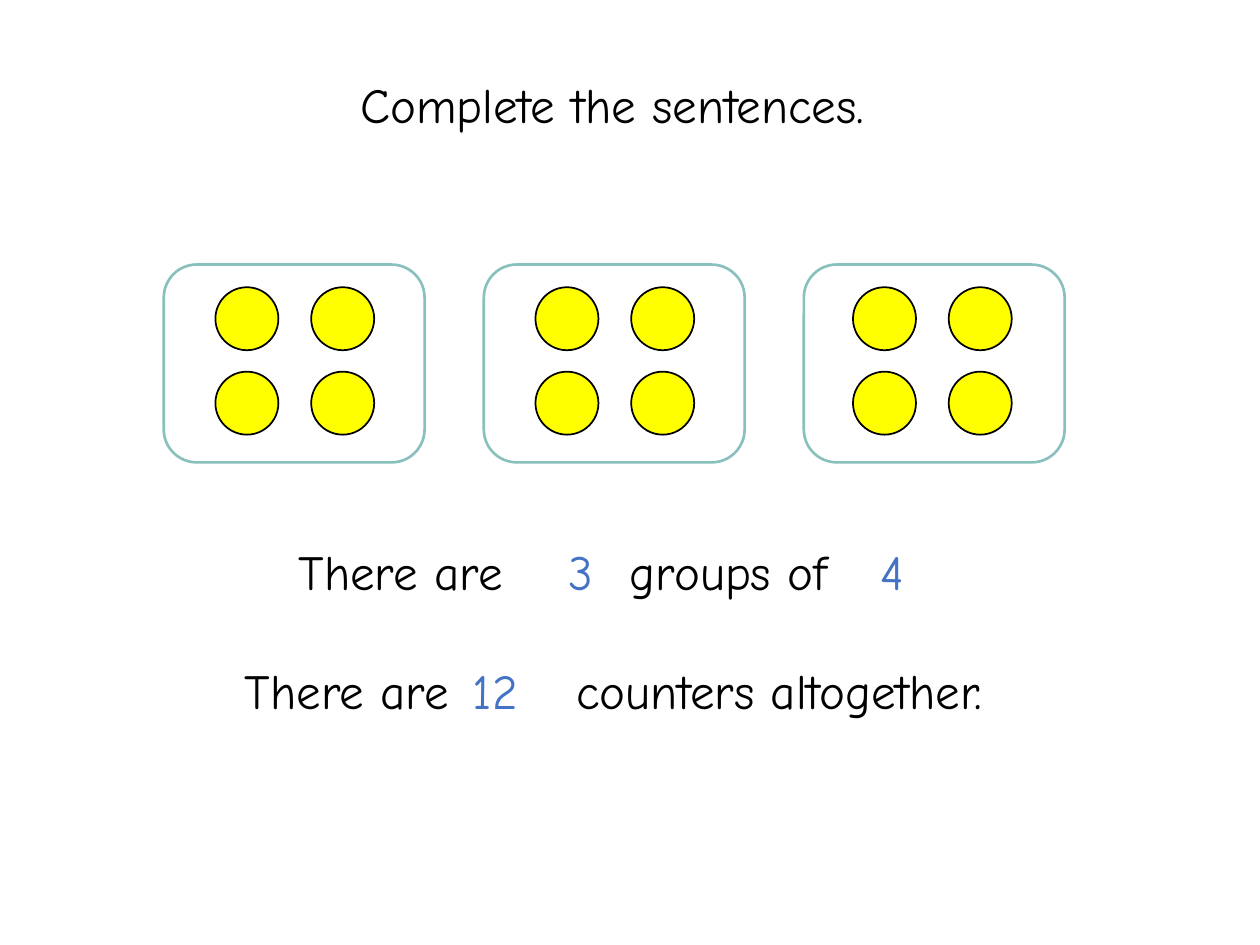
from dataclasses import dataclass
from itertools import product

from pptx import Presentation
from pptx.dml.color import RGBColor
from pptx.enum.shapes import MSO_SHAPE
from pptx.enum.text import MSO_ANCHOR, PP_ALIGN
from pptx.util import Inches, Pt

BLACK = RGBColor(0x00, 0x00, 0x00)
BLUE = RGBColor(0x44, 0x72, 0xC4)
TEAL = RGBColor(0x88, 0xC0, 0xBD)
YELLOW = RGBColor(0xFF, 0xFF, 0x00)
FONT = "Comic Neue"
COLS, ROWS = 100, 75

deck = Presentation()
deck.slide_width, deck.slide_height = Inches(10), Inches(7.5)
slide = deck.slides.add_slide(deck.slide_layouts[5])


@dataclass(frozen=True)
class Box:
    col: float
    row: float
    wide: float
    high: float

    def place(self) -> tuple[int, int, int, int]:
        unit_x, unit_y = deck.slide_width / COLS, deck.slide_height / ROWS
        return (round(self.col * unit_x), round(self.row * unit_y),
                round(self.wide * unit_x), round(self.high * unit_y))


@dataclass(frozen=True)
class Group:
    card: float
    dots: float


@dataclass(frozen=True)
class Answer:
    text: str
    box: Box


GROUPS = [Group(13, 17.1), Group(38.4, 42.5), Group(63.8, 67.7)]
ANSWERS = [
    Answer("3", Box(43.2, 42.5, 5.8, 5.7)),
    Answer("4", Box(67.9, 42.5, 5.8, 5.7)),
    Answer("12", Box(35.3, 51.9, 8, 5.7)),
]
SENTENCES = ["There are \t\t groups of \t\t",
             "There are \t\t counters altogether."]


def write(shape, *lines: str, color: RGBColor = BLACK, size: float = 28,
          gap: float = 0) -> None:
    frame = shape.text_frame
    frame.word_wrap = True
    frame.vertical_anchor = MSO_ANCHOR.TOP
    for index, line in enumerate(lines):
        para = frame.add_paragraph() if index else frame.paragraphs[0]
        para.alignment = PP_ALIGN.CENTER
        if index:
            para.space_before = Pt(gap)
        run = para.add_run()
        run.text = line
        run.font.name = FONT
        run.font.size = Pt(size)
        run.font.color.rgb = color


def label(box: Box, *lines: str, **style) -> None:
    write(slide.shapes.add_textbox(*box.place()), *lines, **style)


def draw(kind: MSO_SHAPE, box: Box, line: RGBColor, width: float,
         fill: RGBColor | None = None) -> None:
    shape = slide.shapes.add_shape(kind, *box.place())
    shape.shadow.inherit = False
    shape.line.color.rgb = line
    shape.line.width = Pt(width)
    if fill is None:
        shape.fill.background()
    else:
        shape.fill.solid()
        shape.fill.fore_color.rgb = fill


def count(group: Group) -> None:
    draw(MSO_SHAPE.ROUNDED_RECTANGLE, Box(group.card, 21, 20.7, 15.7), TEAL, 1.5)
    for row, col in product(range(2), repeat=2):
        dot = Box(group.dots + col * 7.6, 22.8 + row * 6.7, 5, 5)
        draw(MSO_SHAPE.OVAL, dot, BLACK, 1, YELLOW)


def main() -> None:
    title = slide.shapes.title
    title.left, title.top, title.width, title.height = Box(7.6, 5.4, 82, 5.7).place()
    write(title, "Complete the sentences.")
    for group in GROUPS:
        count(group)
    label(Box(7.7, 42.5, 82, 15.1), *SENTENCES, gap=34)
    for answer in ANSWERS:
        label(answer.box, answer.text, color=BLUE)
    deck.save("out.pptx")


if __name__ == "__main__":
    main()
